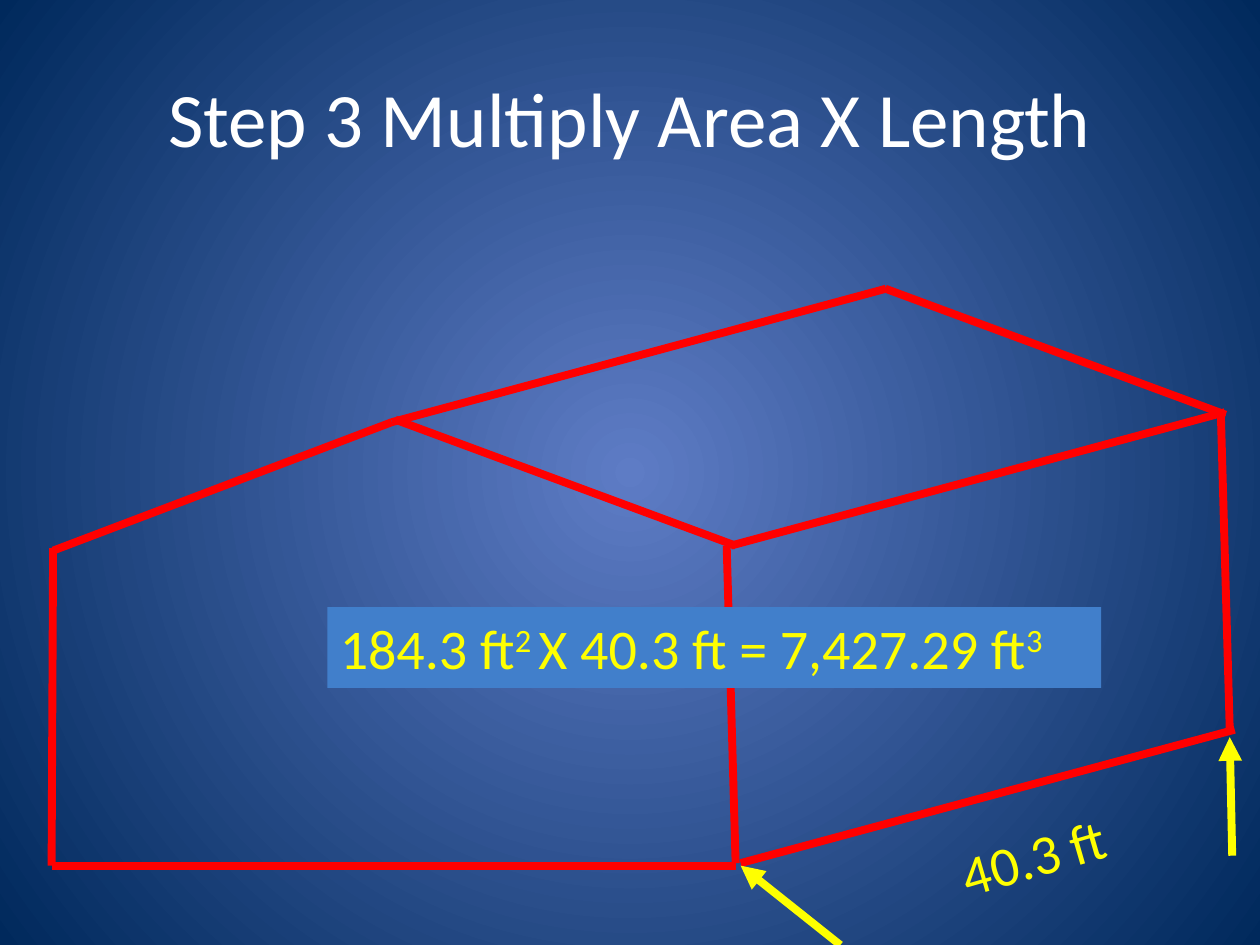
from dataclasses import dataclass
from lxml.etree import SubElement
from pptx import Presentation
from pptx.dml.color import RGBColor as Rgb
from pptx.enum.shapes import MSO_CONNECTOR as Link, MSO_SHAPE as Shape
from pptx.enum.text import MSO_ANCHOR as Anchor, PP_ALIGN as Align
from pptx.oxml.ns import qn
from pptx.util import Cm, Pt


@dataclass(frozen=True)
class Theme:
    font: str = "Calibri"
    head: int = 44
    body: int = 32
    line: float = 4.5
    white: str = "FFFFFF"
    red: str = "FF0000"
    gold: str = "FFFF00"
    band: str = "417FCB"
    glow: str = "5E7CC5"
    edge: str = "00295C"


THEME = Theme()
DEPTH = (9.96, -2.69)
SLOPE = (6.86, 2.54)
WALL = (0.18, 6.4)
EDGES = [
    (6.86, 2.69, DEPTH),
    (13.69, 5.18, DEPTH),
    (13.89, 11.58, DEPTH),
    (16.81, 0, SLOPE),
    (6.93, 2.64, SLOPE),
    (0.03, 5.28, (6.83, -2.59)),
    (23.57, 2.49, WALL),
    (13.61, 5.18, WALL),
    (0.03, 5.23, (-0.03, 6.4)),
    (0, 11.63, (13.79, 0)),
]
MARKS = [
    (23.8, 11.43, (-0.05, -2.39)),
    (15.9, 13.23, (-2.01, -1.6)),
]


def place(shape, box):
    shape.left, shape.top, shape.width, shape.height = map(Cm, box)


def write(para, text, size, color, base=0):
    run = para.add_run()
    run.text = text
    run.font.name = THEME.font
    run.font.size = Pt(size)
    run.font.color.rgb = Rgb.from_string(color)
    if base:
        run._r.get_or_add_rPr().set("baseline", str(base * 1000))


def stroke(slide, box, start, color, arrow=False):
    x, y, (dx, dy) = start
    x, y = x + box[0], y + box[1]
    line = slide.shapes.add_connector(
        Link.STRAIGHT, Cm(x), Cm(y), Cm(x + dx), Cm(y + dy))
    line.line.color.rgb = Rgb.from_string(color)
    line.line.width = Pt(THEME.line)
    props = line._element.spPr
    if arrow:
        SubElement(props.find(qn("a:ln")), qn("a:tailEnd"), type="triangle")
    SubElement(props, qn("a:effectLst"))


def paint(slide):
    fill = slide.background.fill
    fill.gradient()
    for stop, color in zip(fill.gradient_stops, (THEME.glow, THEME.edge)):
        stop.color.rgb = Rgb.from_string(color)
    grad = next(slide.element.iter(qn("a:gradFill")))
    grad.remove(grad.find(qn("a:lin")))
    route = SubElement(grad, qn("a:path"), path="circle")
    SubElement(route, qn("a:fillToRect"), l="50000", t="50000", r="50000", b="50000")


def title(slide, box):
    head = slide.shapes.title
    place(head, box)
    head.text_frame.vertical_anchor = Anchor.MIDDLE
    para = head.text_frame.paragraphs[0]
    para.alignment = Align.CENTER
    write(para, "Step 3 Multiply Area X Length", THEME.head, THEME.white)


def house(slide, box):
    for edge in EDGES:
        stroke(slide, box, edge, THEME.red)
    for mark in MARKS:
        stroke(slide, box, mark, THEME.gold, arrow=True)


def length(slide, box):
    note = slide.shapes.add_textbox(*map(Cm, box))
    note.rotation = 343.8
    note.text_frame.word_wrap = False
    write(note.text_frame.paragraphs[0], "40.3 ft", THEME.body, THEME.gold)


def volume(slide, box):
    band = slide.shapes.add_shape(Shape.RECTANGLE, *map(Cm, box))
    band.shadow.inherit = False
    band.fill.solid()
    band.fill.fore_color.rgb = Rgb.from_string(THEME.band)
    band.line.fill.background()
    frame = band.text_frame
    frame.word_wrap = True
    frame.vertical_anchor = Anchor.TOP
    para = frame.paragraphs[0]
    para.alignment = Align.LEFT
    runs = [("184.3 ft", 0), ("2 ", 30), ("X 40.3 ft = 7,427.29 ft", 0), ("3", 30)]
    for text, base in runs:
        write(para, text, THEME.body, THEME.gold, base)


def main():
    deck = Presentation()
    deck.slide_width, deck.slide_height = Cm(25.4), Cm(19.05)
    slide = deck.slides.add_slide(deck.slide_layouts.get_by_name("Title Only"))
    paint(slide)
    title(slide, (1.27, 0.76, 22.86, 3.18))
    house(slide, (1.04, 5.82, 23.85, 13.23))
    length(slide, (19.1, 16.43, 3.53, 1.63))
    volume(slide, (6.6, 12.24, 15.6, 1.63))
    deck.save("out.pptx")


if __name__ == "__main__":
    main()
